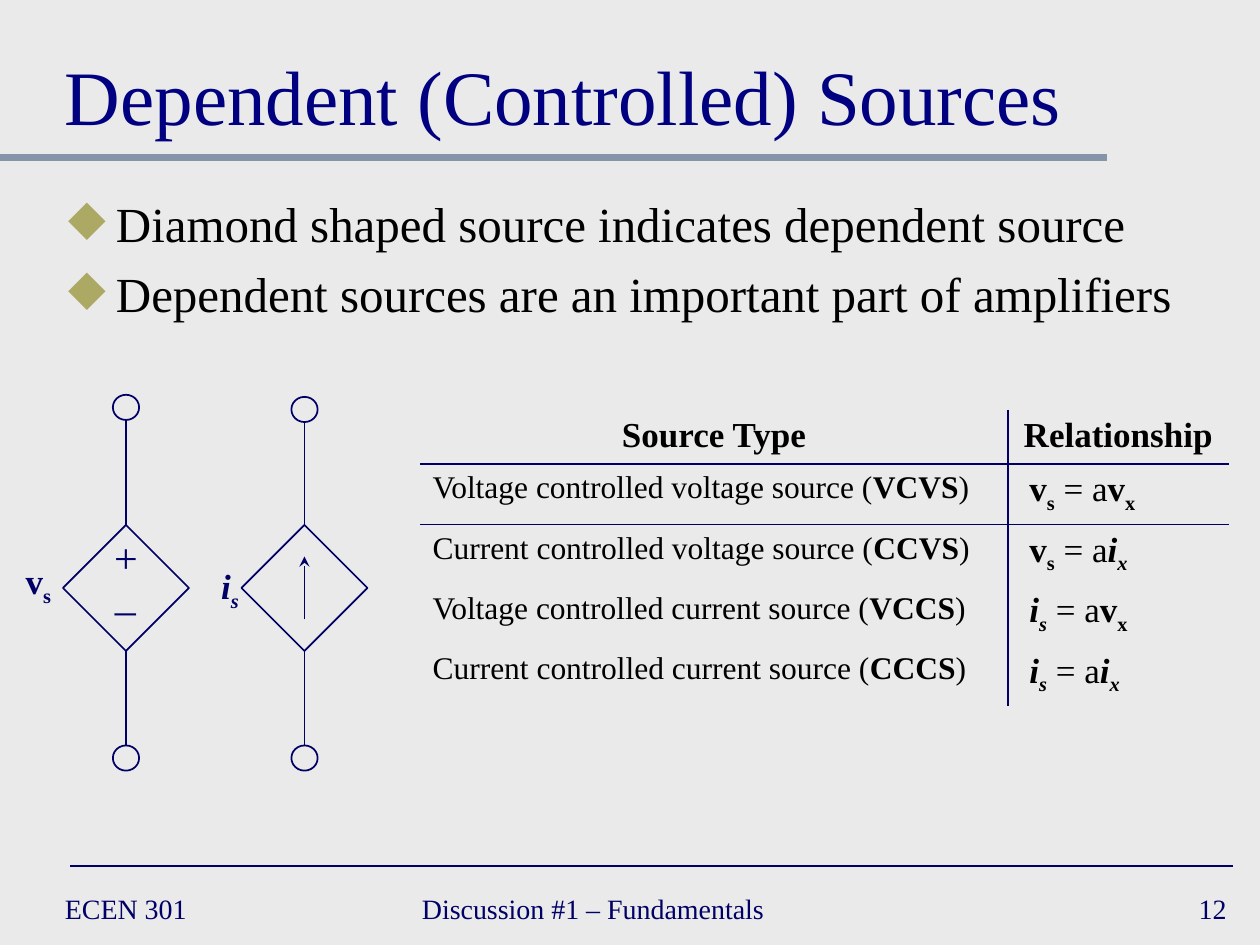
from lxml import etree
from pptx import Presentation
from pptx.dml.color import RGBColor
from pptx.enum.shapes import MSO_CONNECTOR, MSO_SHAPE
from pptx.enum.text import MSO_ANCHOR, PP_ALIGN
from pptx.oxml.ns import qn
from pptx.util import Emu, Inches, Pt

LINE = MSO_CONNECTOR.STRAIGHT
DIAMOND, OVAL = MSO_SHAPE.DIAMOND, MSO_SHAPE.OVAL
LEFT, MID, RIGHT = PP_ALIGN.LEFT, PP_ALIGN.CENTER, PP_ALIGN.RIGHT
TOP, CENTER, BOTTOM = MSO_ANCHOR.TOP, MSO_ANCHOR.MIDDLE, MSO_ANCHOR.BOTTOM
PAPER = RGBColor(0xEA, 0xEA, 0xEA)
INK = RGBColor(0, 0, 0x66)
NAVY = RGBColor(0, 0, 0x80)
BLACK = RGBColor(0, 0, 0)
STEEL = RGBColor(0x84, 0x95, 0xA9)
OLIVE = RGBColor(0xAC, 0xA9, 0x64)
FACE = "Times New Roman"
UNIT = Inches(1) // 12  # the grid has 120 columns and 90 rows


def grid(*steps):
    return [Emu(round(step * UNIT)) for step in steps]


def write(par, runs, size, color, align=LEFT):
    """Runs are (text, marks); marks hold b = bold, i = italic, s = subscript."""
    par.alignment = align
    par.font.name, par.font.size = FACE, Pt(size)
    par.font.color.rgb = color
    for text, marks in runs:
        run = par.add_run()
        run.text = text
        if "b" in marks:
            run.font.bold = True
        if "i" in marks:
            run.font.italic = True
        if "s" in marks:
            run._r.get_or_add_rPr().set("baseline", "-25000")


prs = Presentation()
prs.slide_width, prs.slide_height = grid(120, 90)
slide = prs.slides.add_slide(prs.slide_layouts[6])
slide.background.fill.solid()
slide.background.fill.fore_color.rgb = PAPER
shapes = slide.shapes

# Rules under the title and over the footer, then the wires of both sources
wires = [
    (0, 15, 105.4, 15, STEEL, 4, False),
    (6.7, 82.5, 117.4, 82.5, INK, 1, False),
    (29, 59, 29, 53, INK, 1, True),
]
for mid, top in ((12, 40), (29, 40.2)):
    wires.append((mid, 50, mid, top, INK, 1, False))
    wires.append((mid, 71, mid, 62, INK, 1, False))

    # Diamond and round terminals
    for kind, left, high, wide, tall in (
        (DIAMOND, mid - 6, 50, 12, 12),
        (OVAL, mid - 1.25, top - 2.4, 2.5, 2.4),
        (OVAL, mid - 1.25, 71, 2.5, 2.4),
    ):
        part = shapes.add_shape(kind, *grid(left, high, wide, tall))
        part.shadow.inherit = False
        part.fill.background()
        part.line.color.rgb, part.line.width = INK, Pt(1)

for x1, y1, x2, y2, color, width, arrow in wires:
    wire = shapes.add_connector(LINE, *grid(x1, y1, x2, y2))
    wire.line.color.rgb, wire.line.width = color, Pt(width)
    props = wire._element.spPr
    if arrow:
        etree.SubElement(props.find(qn("a:ln")), qn("a:tailEnd"), type="stealth")
    etree.SubElement(props, qn("a:effectLst"))

# Title, footer and source labels
for spot, runs, size, color, align, anchor, wrap in (
    ((5, 2, 110, 12), [("Dependent (Controlled) Sources", "")], 44, NAVY, LEFT, BOTTOM, True),
    ((5, 84, 26, 5), [("ECEN 301", "")], 16, INK, LEFT, CENTER, True),
    ((39, 84, 46, 5), [("Discussion #1 – Fundamentals", "")], 16, INK, LEFT, CENTER, True),
    ((93, 84, 25, 5), [("12", "")], 16, INK, RIGHT, CENTER, True),
    ((9.7, 50, 4.6, 6), [("+", "")], 24, INK, MID, TOP, False),
    ((9.7, 53.6, 4.5, 6), [("_", "")], 24, INK, MID, TOP, False),
    ((1.2, 52.7, 4.9, 5.1), [("v", "b"), ("s", "bs")], 20, INK, MID, TOP, False),
    ((19.8, 53.2, 4.2, 5.1), [("i", "bi"), ("s", "bis")], 20, INK, MID, TOP, False),
):
    frame = shapes.add_textbox(*grid(*spot)).text_frame
    frame.word_wrap, frame.vertical_anchor = wrap, anchor
    write(frame.paragraphs[0], runs, size, color, align)

# Bullets
body = shapes.add_textbox(*grid(5.3, 17.8, 107.7, 16.5)).text_frame
body.word_wrap = True
for row, text in enumerate((
    "Diamond shaped source indicates dependent source",
    "Dependent sources are an important part of amplifiers",
)):
    par = body.add_paragraph() if row else body.paragraphs[0]
    props = par._p.get_or_add_pPr()
    props.set("marL", str(Inches(0.38)))
    props.set("indent", str(-Inches(0.38)))
    tint = etree.SubElement(props, qn("a:buClr"))
    etree.SubElement(tint, qn("a:srgbClr"), val=str(OLIVE))
    etree.SubElement(props, qn("a:buChar"), char="◆")
    if row:
        par.space_before = Pt(6.5)
    write(par, [(text, "")], 28, BLACK)

# Table of source types: each row is (kind, short name, source, control)
volt, amp = ("v", "b"), ("i", "bi")
rows = [([("Source Type", "b")], [("Relationship", "b")])]
for kind, short, source, control in (
    ("Voltage controlled voltage", "VCVS", volt, volt),
    ("Current controlled voltage", "CCVS", volt, amp),
    ("Voltage controlled current", "VCCS", amp, volt),
    ("Current controlled current", "CCCS", amp, amp),
):
    rows.append((
        [(kind + " source (", ""), (short, "b"), (")", "")],
        [source, ("s", source[1] + "s"), (" = a", ""),
         control, ("x", control[1] + "s")],
    ))

table = shapes.add_table(len(rows), 2, *grid(40, 39, 77, 26.5)).table
table.first_row = table.horz_banding = False
style = table._tbl.tblPr.find(qn("a:tableStyleId"))
style.text = "{2D5ABB26-0587-4C30-8999-92F81FD0307C}"
table.columns[0].width, table.columns[1].width = grid(56, 21)
for row, pair in enumerate(rows):
    table.rows[row].height = grid(5.43 if row else 4.9)[0]
    for col, runs in enumerate(pair):
        cell = table.cell(row, col)
        props = cell._tc.get_or_add_tcPr()
        edges = ["a:lnL" if col else "a:lnR"]
        if row < 2:
            edges.append("a:lnT" if row else "a:lnB")
        for edge in edges:
            rule = etree.SubElement(props, qn(edge), w=str(Pt(1)))
            fill = etree.SubElement(rule, qn("a:solidFill"))
            etree.SubElement(fill, qn("a:srgbClr"), val=str(INK))
        cell.fill.background()
        if row and col:
            cell.margin_left = Inches(0.17)
        size = 18 if row and not col else 20
        write(cell.text_frame.paragraphs[0], runs, size, BLACK, LEFT if row else MID)

prs.save("out.pptx")
